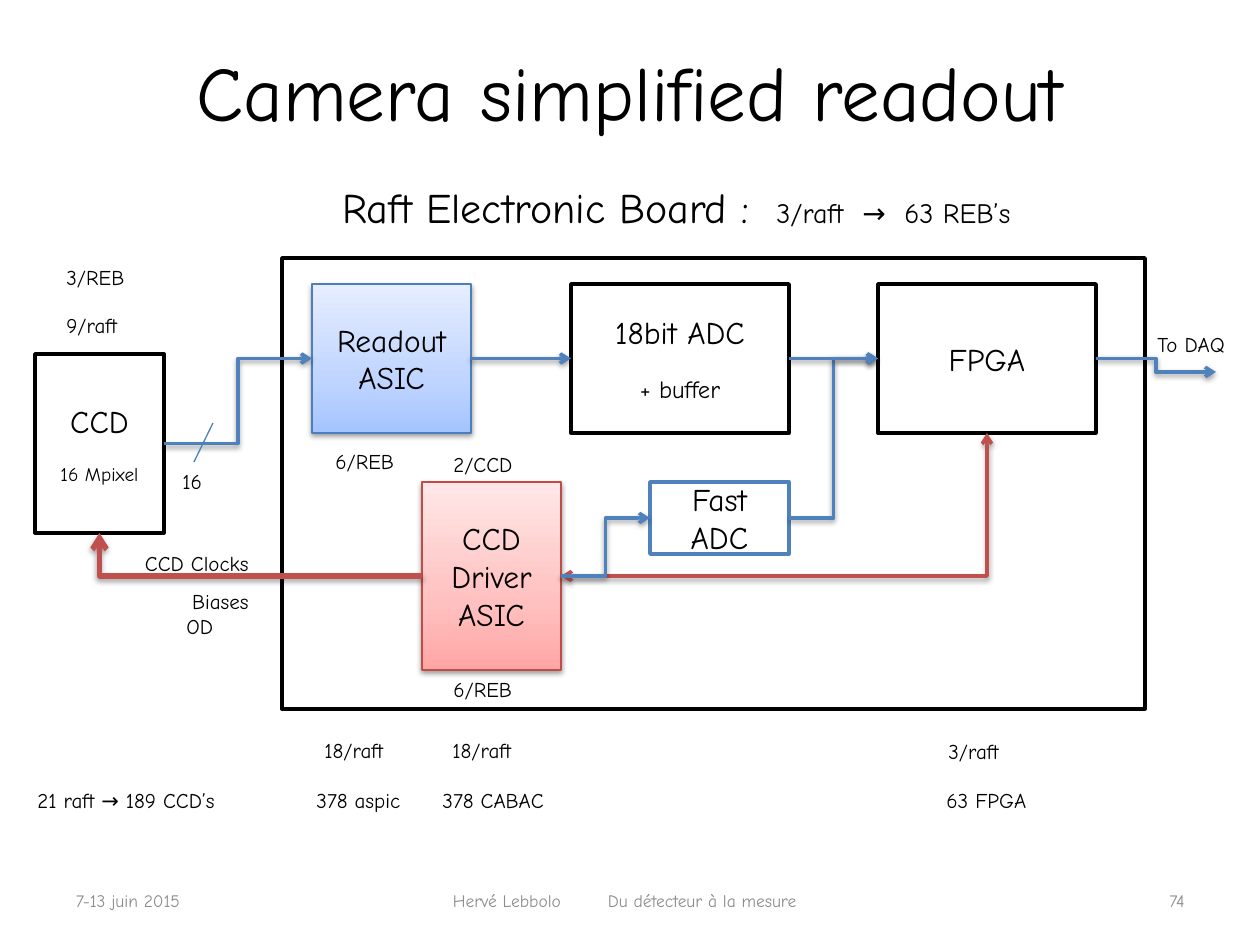
import copy

import lxml.etree
import pptx
import pptx.dml.color
import pptx.enum.shapes
import pptx.enum.text
import pptx.oxml.ns
import pptx.util

RGB = pptx.dml.color.RGBColor
ALIGN = pptx.enum.text.PP_ALIGN
ANCHOR = pptx.enum.text.MSO_ANCHOR
LINK = pptx.enum.shapes.MSO_CONNECTOR
RECTANGLE = pptx.enum.shapes.MSO_SHAPE.RECTANGLE
qn = pptx.oxml.ns.qn

BLACK = RGB(0x00, 0x00, 0x00)
WHITE = RGB(0xFF, 0xFF, 0xFF)
GREY = RGB(0x8C, 0x8C, 0x8C)
BLUE = RGB(0x4F, 0x81, 0xBD)
BLUE_EDGE = RGB(0x4B, 0x7E, 0xBC)
RED = RGB(0xC0, 0x50, 0x4D)
RED_EDGE = RGB(0xBF, 0x4C, 0x48)
BLUE_SHADES = [RGB(0xA4, 0xC4, 0xFF), RGB(0xBF, 0xD4, 0xFF), RGB(0xE6, 0xEE, 0xFF)]
RED_SHADES = [RGB(0xFF, 0xA6, 0xA5), RGB(0xFF, 0xC0, 0xBF), RGB(0xFF, 0xE7, 0xE7)]

FONT = "Comic Neue"
PX = pptx.util.Inches(1) / 126
TOP, LEFT, BOTTOM, RIGHT = range(4)


def write(para, text, size, color=BLACK, align=ALIGN.LEFT, tabs=()):
    para.alignment = align
    if tabs:
        stops = lxml.etree.SubElement(para._p.get_or_add_pPr(), qn("a:tabLst"))
        for tab in tabs:
            lxml.etree.SubElement(stops, qn("a:tab"), pos=str(round(tab * PX)), algn="l")
    para.font.name = FONT
    para.font.size = pptx.util.Pt(size)
    para.font.color.rgb = color
    span = para.add_run()
    span.text = text
    return span


def set_effects(item, shadow):
    effects = lxml.etree.SubElement(item.element.spPr, qn("a:effectLst"))
    if shadow:
        outer = lxml.etree.SubElement(effects, qn("a:outerShdw"), blurRad="40000",
                                      dist="20000", dir="5400000", rotWithShape="0")
        tint = lxml.etree.SubElement(outer, qn("a:srgbClr"), val="000000")
        lxml.etree.SubElement(tint, qn("a:alpha"), val="38000")


deck = pptx.Presentation()
deck.slide_width = round(1260 * PX)
deck.slide_height = round(945 * PX)
page = deck.slides.add_slide(deck.slide_layouts[5])

title = page.shapes.title
title.left, title.top, title.width, title.height = [round(n * PX) for n in (63, 38, 1134, 137)]
title.text_frame.auto_size = pptx.enum.text.MSO_AUTO_SIZE.NONE
title.text_frame.vertical_anchor = ANCHOR.TOP
write(title.text_frame.paragraphs[0], "Camera simplified readout", 44, align=ALIGN.CENTER)

blocks = [
    ("board", (282, 258, 863, 451), WHITE, BLACK, 2, []),
    ("ccd", (35, 354, 129, 179), WHITE, BLACK, 2, [("CCD", 18, 0), ("16 Mpixel", 11, 13)]),
    ("readout", (312, 284, 159, 149), BLUE_SHADES, BLUE_EDGE, 0.75, [("Readout ASIC", 18, 0)]),
    ("adc", (571, 284, 218, 149), WHITE, BLACK, 2, [("18bit ADC", 18, 0), ("+ buffer", 14, 13)]),
    ("fpga", (878, 284, 218, 149), WHITE, BLACK, 2, [("FPGA", 18, 0)]),
    ("driver", (422, 482, 139, 188), RED_SHADES, RED_EDGE, 0.75,
     [("CCD", 18, 0), ("Driver", 18, 0), ("ASIC", 18, 0)]),
    ("fast", (650, 482, 139, 72), WHITE, BLUE, 2, [("Fast", 18, 0), ("ADC", 18, 0)]),
]
boxes = {}
for name, place, fill, edge, weight, lines in blocks:
    box = page.shapes.add_shape(RECTANGLE, *[round(n * PX) for n in place])
    boxes[name] = box
    box.line.color.rgb = edge
    box.line.width = pptx.util.Pt(weight)
    if fill is WHITE:
        box.fill.solid()
        box.fill.fore_color.rgb = fill
        box.shadow.inherit = False
    else:
        box.fill.gradient()
        box.fill.gradient_angle = 90
        first = box.element.spPr.find(".//" + qn("a:gs"))
        first.addnext(copy.deepcopy(first))
        for stop, position, shade in zip(box.fill.gradient_stops, (0, 0.35, 1), fill):
            stop.position = position
            stop.color.rgb = shade
        set_effects(box, True)
    frame = box.text_frame
    frame.word_wrap = True
    frame.vertical_anchor = ANCHOR.MIDDLE
    for index, (text, size, gap) in enumerate(lines):
        para = frame.add_paragraph() if index else frame.paragraphs[0]
        if gap:
            para.space_before = pptx.util.Pt(gap)
        write(para, text, size, align=ALIGN.CENTER)

STRAIGHT, BENT, CORNER = "line", "bentConnector3", "bentConnector2"
links = [
    ("ccd", RIGHT, "readout", LEFT, BENT, BLUE, 2, ["tail"]),
    ("fpga", RIGHT, (1216, 372), None, BENT, BLUE, 2, ["tail"]),
    ("driver", LEFT, "ccd", BOTTOM, CORNER, RED, 3, ["tail"]),
    ("driver", RIGHT, "fpga", BOTTOM, CORNER, RED, 2, ["head", "tail"]),
    ("driver", RIGHT, "fast", LEFT, BENT, BLUE, 2, ["tail"]),
    ("fast", RIGHT, "fpga", LEFT, BENT, BLUE, 2, ["tail"]),
    ("readout", RIGHT, "adc", LEFT, STRAIGHT, BLUE, 2, ["tail"]),
    ("adc", RIGHT, "fpga", LEFT, STRAIGHT, BLUE, 2, ["tail"]),
    ((213, 423), None, (194, 462), None, STRAIGHT, BLUE_EDGE, 0.75, []),
]
for start, start_side, end, end_side, route, color, weight, heads in links:
    begin = (0, 0) if start in boxes else start
    finish = (0, 0) if end in boxes else end
    kind = LINK.STRAIGHT if route == STRAIGHT else LINK.ELBOW
    link = page.shapes.add_connector(kind, *[round(n * PX) for n in begin + finish])
    if start in boxes:
        link.begin_connect(boxes[start], start_side)
    if end in boxes:
        link.end_connect(boxes[end], end_side)
    link.element.spPr.find(qn("a:prstGeom")).set("prst", route)
    link.line.color.rgb = color
    link.line.width = pptx.util.Pt(weight)
    for head in heads:
        lxml.etree.SubElement(link.line._get_or_add_ln(), qn(f"a:{head}End"), type="arrow")
    set_effects(link, bool(heads))

labels = [
    ("3/REB", 54, 258, 89, 38, 12, ()),
    ("9/raft", 54, 306, 91, 38, 12, ()),
    ("16", 170, 462, 48, 38, 12, ()),
    ("6/REB", 323, 442, 89, 38, 12, ()),
    ("2/CCD", 441, 445, 91, 38, 12, ()),
    ("6/REB", 441, 670, 89, 38, 12, ()),
    ("18/raft", 312, 731, 101, 38, 12, ()),
    ("18/raft", 440, 731, 101, 38, 12, ()),
    ("3/raft", 936, 732, 91, 38, 12, ()),
    ("To DAQ", 1145, 325, 107, 38, 12, ()),
    ("21 raft → 189 CCD’s\t378 aspic\t378 CABAC\t63 FPGA", 25, 781, 1028, 38, 12,
     (279, 405, 909)),
    ("Raft Electronic Board :\t", 330, 175, 772, 63, 24, (434, 520, 562)),
]
for text, left, top, width, height, size, tabs in labels:
    box = page.shapes.add_textbox(*[round(n * PX) for n in (left, top, width, height)])
    box.text_frame.word_wrap = False
    write(box.text_frame.paragraphs[0], text, size, tabs=tabs)

count = box.text_frame.paragraphs[0].add_run()
count.text = "3/raft\t→\t63 REB’s"
count.font.size = pptx.util.Pt(16)

signals = page.shapes.add_textbox(*[round(n * PX) for n in (126, 532, 135, 115)])
signals.text_frame.word_wrap = True
for index, text in enumerate(["CCD Clocks", "Biases", "OD"]):
    para = signals.text_frame.add_paragraph() if index else signals.text_frame.paragraphs[0]
    if text == "OD":
        para._p.get_or_add_pPr().set("marL", str(round(48 * PX)))
        write(para, text, 12)
    else:
        para.line_spacing = 1.5
        write(para, text, 12, align=ALIGN.RIGHT)

footers = [
    ("7-13 juin 2015", 63, 190, 13, ALIGN.LEFT, ()),
    ("Hervé Lebbolo\tDu détecteur à la mesure", 292, 665, 161, ALIGN.LEFT, (155,)),
    ("74", 1047, 150, 13, ALIGN.RIGHT, ()),
]
for text, left, width, margin, align, tabs in footers:
    box = page.shapes.add_textbox(*[round(n * PX) for n in (left, 876, width, 50)])
    box.text_frame.word_wrap = True
    box.text_frame.margin_left = round(margin * PX)
    box.text_frame.vertical_anchor = ANCHOR.MIDDLE
    write(box.text_frame.paragraphs[0], text, 10, GREY, align, tabs)

deck.save("out.pptx")
